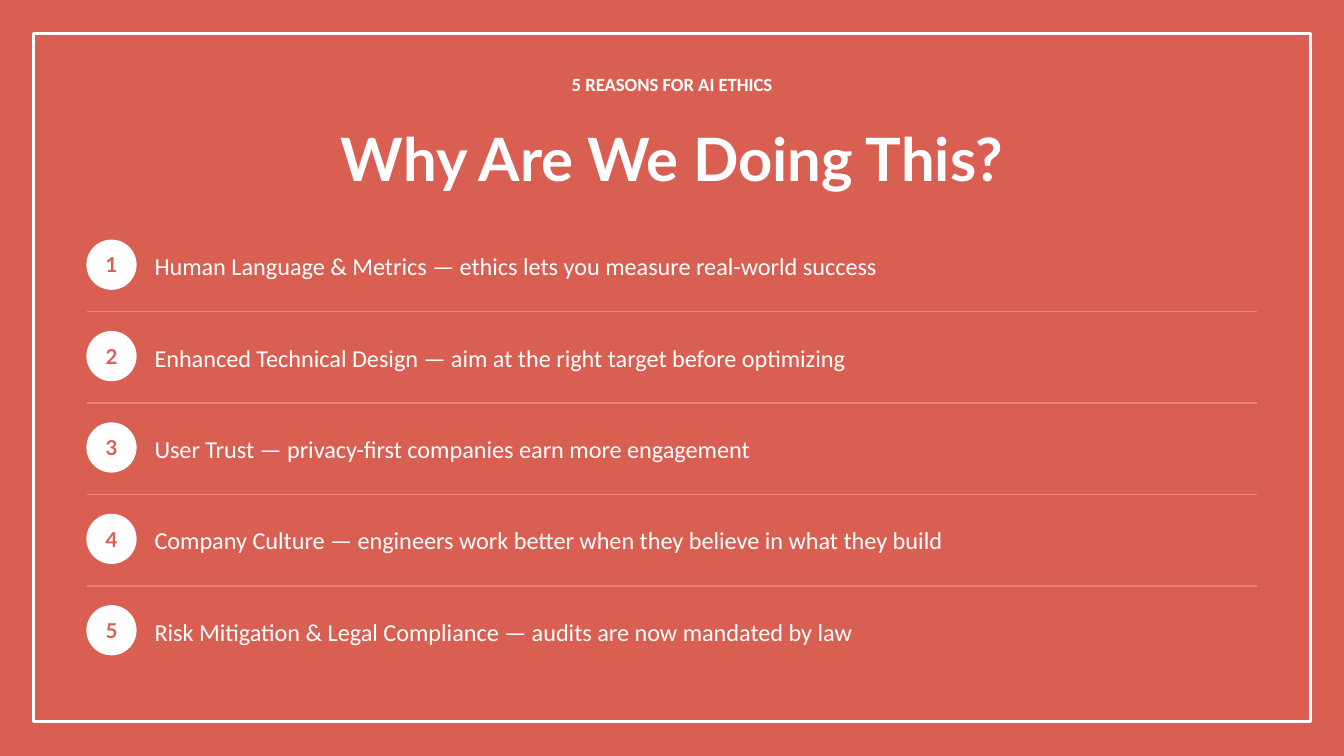
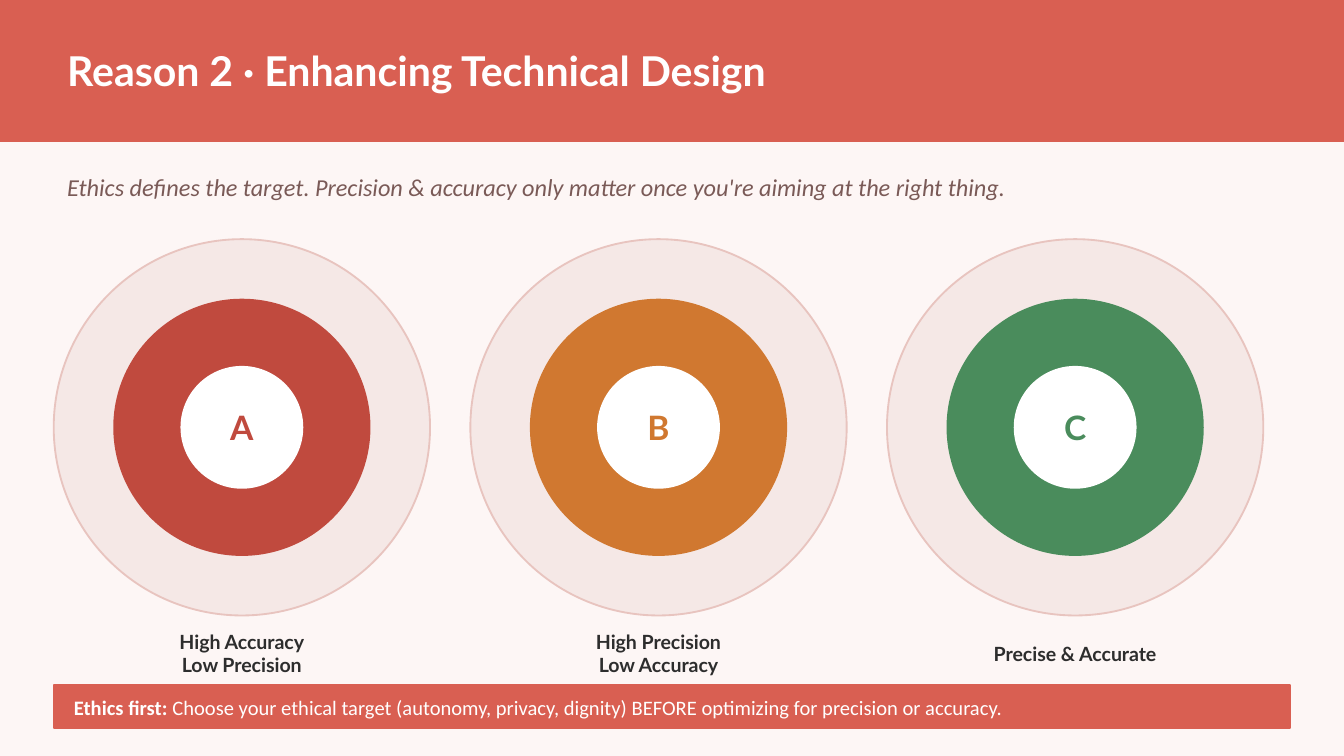
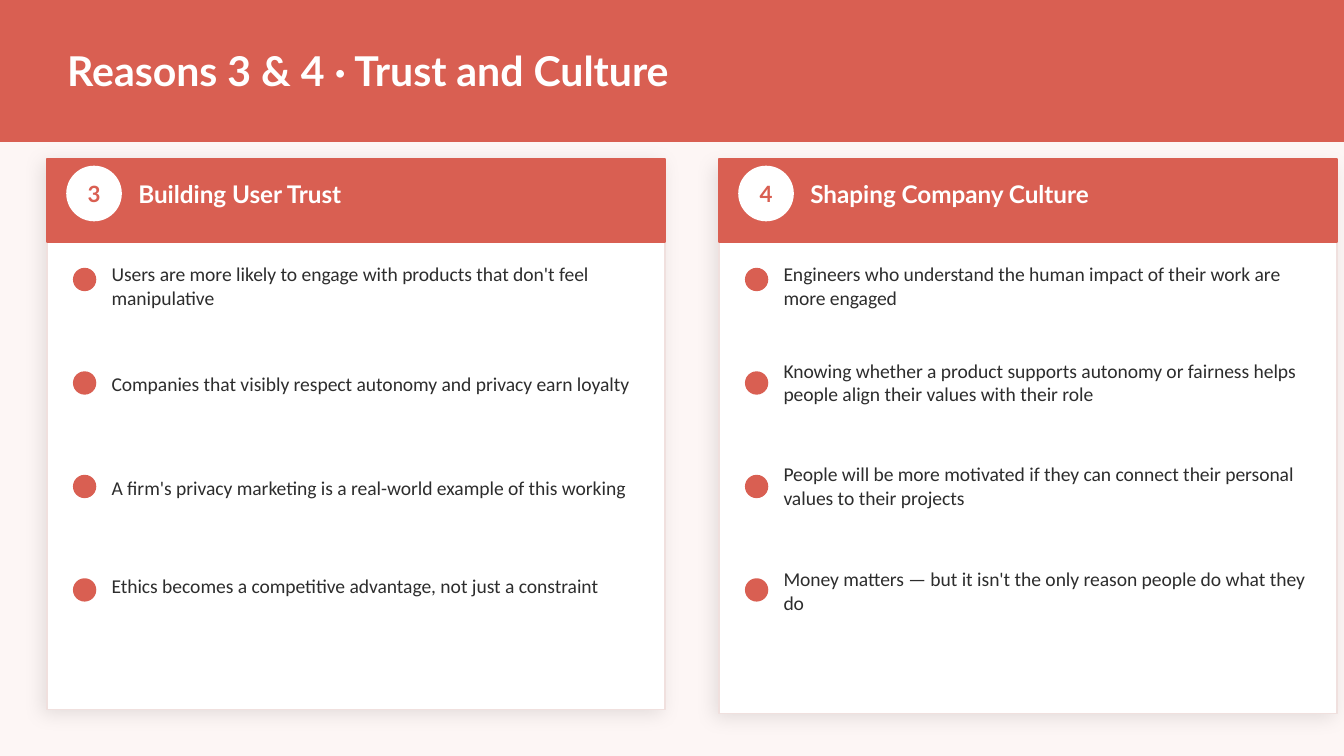
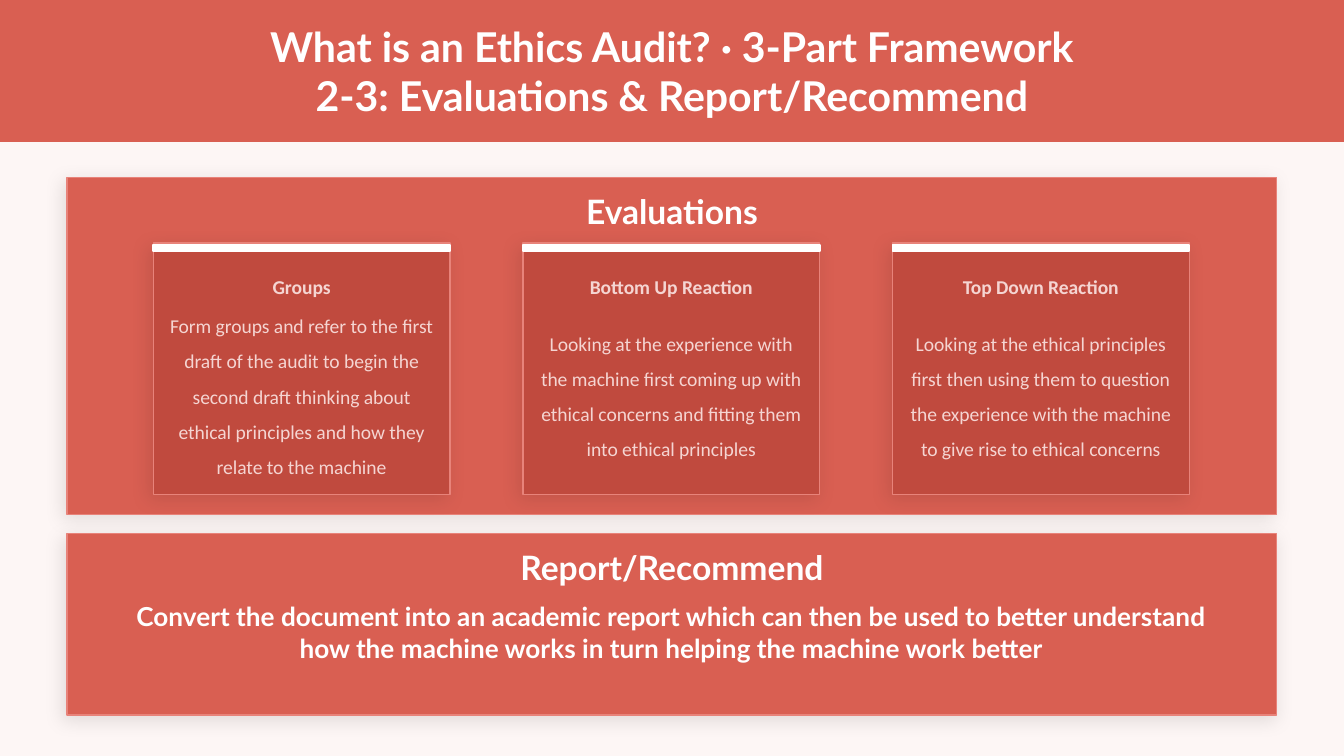
import lxml.etree
import pptx
import pptx.dml.color
import pptx.enum.shapes
import pptx.enum.text
import pptx.oxml
import pptx.oxml.ns
import pptx.util

PIXEL = 9144
SLIDE_WIDTH = 1000
BAND_HEIGHT = 105

COLORS = {
    "coral": "D95F52",
    "coral_light": "E8837A",
    "brick": "C04A3E",
    "orange": "D07830",
    "green": "4A8C5C",
    "white": "FFFFFF",
    "paper": "FDF6F5",
    "ring": "F5E8E6",
    "ring_edge": "E8C4BF",
    "card_edge": "F0E0DE",
    "blush": "F5D5D2",
    "ink": "2D2D2D",
    "brown": "7A5A57",
}
ALIGNMENTS = {
    "left": pptx.enum.text.PP_ALIGN.LEFT,
    "center": pptx.enum.text.PP_ALIGN.CENTER,
}
ANCHORS = {
    "top": pptx.enum.text.MSO_ANCHOR.TOP,
    "middle": pptx.enum.text.MSO_ANCHOR.MIDDLE,
}
SHAPES = {
    "rectangle": pptx.enum.shapes.MSO_SHAPE.RECTANGLE,
    "ellipse": pptx.enum.shapes.MSO_SHAPE.OVAL,
}
SHADOW = (
    '<a:outerShdw {} blurRad="127000" dist="38100" dir="8100000" algn="bl" rotWithShape="0">'
    '<a:srgbClr val="000000"><a:alpha val="10000"/></a:srgbClr></a:outerShdw>'
).format(pptx.oxml.ns.nsdecls("a"))


def px(length):
    return pptx.util.Emu(length * PIXEL)


def color(name):
    return pptx.dml.color.RGBColor.from_string(COLORS[name])


def write_text(shape, text, size=10.5, font="Calibri", ink="white", bold=False, italic=False,
               align="left", anchor="middle", margin=0, indent=0, spacing=None, lead=""):
    frame = shape.text_frame
    frame.word_wrap = True
    frame.auto_size = pptx.enum.text.MSO_AUTO_SIZE.NONE
    frame.vertical_anchor = ANCHORS[anchor]
    frame.margin_top = frame.margin_bottom = frame.margin_right = px(margin)
    frame.margin_left = px(margin + indent)
    for index, line in enumerate(text.split("\n")):
        paragraph = frame.paragraphs[0] if index == 0 else frame.add_paragraph()
        paragraph.alignment = ALIGNMENTS[align]
        if spacing:
            paragraph.line_spacing = spacing
        pieces = [(line, bold)]
        if lead and index == 0:
            pieces.insert(0, (lead, True))
        for words, heavy in pieces:
            run = paragraph.add_run()
            run.text = words
            run.font.size = pptx.util.Pt(size)
            run.font.name = font
            run.font.bold = heavy
            run.font.italic = italic
            run.font.color.rgb = color(ink)


class Deck:
    def __init__(self):
        self.presentation = pptx.Presentation()
        self.presentation.slide_width = px(SLIDE_WIDTH)
        self.presentation.slide_height = px(SLIDE_WIDTH) * 9 // 16
        self.slide = None

    def start_slide(self, background):
        layout = self.presentation.slide_layouts.get_by_name("Title Only")
        self.slide = self.presentation.slides.add_slide(layout)
        fill = self.slide.background.fill
        fill.solid()
        fill.fore_color.rgb = color(background)

    def title(self, text, top=0, height=BAND_HEIGHT, size=22, align="left"):
        title = self.slide.shapes.title
        title.left, title.top, title.width, title.height = px(50), px(top), px(900), px(height)
        write_text(title, text, size=size, font="Lato", bold=True, align=align)
        self.slide.shapes.element.append(title.element)

    def start_banded_slide(self, text, align="left"):
        self.start_slide("paper")
        self.shape(0, 0, SLIDE_WIDTH, BAND_HEIGHT, "coral")
        self.title(text, align=align)

    def shape(self, left, top, width, height, fill, line=None, line_width=1,
              kind="rectangle", shadow=False):
        shape = self.slide.shapes.add_shape(SHAPES[kind], px(left), px(top), px(width), px(height))
        shape.shadow.inherit = False
        if shadow:
            effects = shape.element.spPr.find(pptx.oxml.ns.qn("a:effectLst"))
            effects.append(pptx.oxml.parse_xml(SHADOW))
        if fill:
            shape.fill.solid()
            shape.fill.fore_color.rgb = color(fill)
        else:
            shape.fill.background()
        shape.line.color.rgb = color(line or fill)
        shape.line.width = pptx.util.Pt(line_width)
        return shape

    def card(self, left, top, width, height, fill, line):
        return self.shape(left, top, width, height, fill, line, 0.75, shadow=True)

    def circle(self, left, top, diameter, fill, line=None):
        return self.shape(left, top, diameter, diameter, fill, line, kind="ellipse")

    def badge(self, left, top, diameter, text, size, ink="coral"):
        circle = self.circle(left, top, diameter, "white")
        write_text(circle, text, size=size, font="Lato", ink=ink, bold=True, align="center")

    def text(self, left, top, width, height, text, **text_format):
        box = self.slide.shapes.add_textbox(px(left), px(top), px(width), px(height))
        write_text(box, text, **text_format)

    def rule(self, left, right, y, line):
        connector = self.slide.shapes.add_connector(
            pptx.enum.shapes.MSO_CONNECTOR.STRAIGHT, px(left), px(y), px(right), px(y))
        connector.line.color.rgb = color(line)
        connector.line.width = pptx.util.Pt(0.75)
        lxml.etree.SubElement(connector.element.spPr, pptx.oxml.ns.qn("a:effectLst"))


def build_reasons(deck):
    reasons = [
        "Human Language & Metrics — ethics lets you measure real-world success",
        "Enhanced Technical Design — aim at the right target before optimizing",
        "User Trust — privacy-first companies earn more engagement",
        "Company Culture — engineers work better when they believe in what they build",
        "Risk Mitigation & Legal Compliance — audits are now mandated by law",
    ]
    deck.start_slide("coral")
    deck.shape(25, 25, 950, 512, None, "white", 1.5)
    deck.text(50, 45, 900, 35, "5 REASONS FOR AI ETHICS", size=10, bold=True, align="center")
    deck.title("Why Are We Doing This?", top=82, height=70, size=32, align="center")
    for index, reason in enumerate(reasons):
        top = 172 + 68 * index
        if index:
            deck.rule(65, 935, top - 8, "coral_light")
        deck.badge(65, top + 7, 36, str(index + 1), 11)
        deck.text(115, top, 830, 52, reason, size=13)


def build_targets(deck):
    targets = [
        ("A", "brick", "High Accuracy\nLow Precision"),
        ("B", "orange", "High Precision\nLow Accuracy"),
        ("C", "green", "Precise & Accurate"),
    ]
    deck.start_banded_slide("Reason 2 · Enhancing Technical Design")
    deck.text(50, 115, 900, 48,
              "Ethics defines the target. Precision & accuracy only matter once you're aiming "
              "at the right thing.", size=13, ink="brown", italic=True)
    for index, (letter, hue, caption) in enumerate(targets):
        left = 40 + 310 * index
        deck.circle(left, 178, 280, "ring", "ring_edge")
        deck.circle(left + 45, 223, 190, hue)
        deck.badge(left + 95, 273, 90, letter, 18, hue)
        deck.text(left, 465, 280, 42, caption, font="Lato", ink="ink", bold=True, align="center")
    banner = deck.shape(40, 510, 920, 32, "coral")
    write_text(banner, "Choose your ethical target (autonomy, privacy, dignity) BEFORE optimizing "
               "for precision or accuracy.", size=11, indent=15, lead="Ethics first: ")


def build_trust_and_culture(deck):
    panels = [
        ("3", "Building User Trust", 118, [
            (180, "Users are more likely to engage with products that don't feel manipulative"),
            (253, "Companies that visibly respect autonomy and privacy earn loyalty"),
            (330, "A firm's privacy marketing is a real-world example of this working"),
            (403, "Ethics becomes a competitive advantage, not just a constraint"),
        ]),
        ("4", "Shaping Company Culture", 121, [
            (180, "Engineers who understand the human impact of their work are more engaged"),
            (252, "Knowing whether a product supports autonomy or fairness helps people align "
                  "their values with their role"),
            (329, "People will be more motivated if they can connect their personal values to "
                  "their projects"),
            (407, "Money matters — but it isn't the only reason people do what they do"),
        ]),
    ]
    deck.start_banded_slide("Reasons 3 & 4 · Trust and Culture")
    for column, (number, heading, card_top, points) in enumerate(panels):
        left = 35 + 500 * column
        deck.card(left, card_top, 460, 410, "white", "card_edge")
        deck.shape(left, 118, 460, 62, "coral")
        deck.badge(left + 15, 124, 40, number, 12)
        deck.text(left + 68, 124, 370, 40, heading, size=13, font="Lato", bold=True)
        for row, (text_top, point) in enumerate(points):
            deck.circle(left + 20, 200 + 77 * row, 16, "coral")
            deck.text(left + 48, text_top, 395, 65, point, ink="ink")


def build_audit(deck):
    evaluations = [
        ("Groups", "Form groups and refer to the first draft of the audit to begin the second "
                   "draft thinking about ethical principles and how they relate to the machine"),
        ("Bottom Up Reaction", "Looking at the experience with the machine first coming up with "
                               "ethical concerns and fitting them into ethical principles"),
        ("Top Down Reaction", "Looking at the ethical principles first then using them to question "
                              "the experience with the machine to give rise to ethical concerns"),
    ]
    heading_format = dict(font="Lato", bold=True, align="center", anchor="top", margin=10)
    card_format = dict(ink="blush", align="center", spacing=1.5)
    deck.start_banded_slide("What is an Ethics Audit? · 3-Part Framework\n"
                            "2-3: Evaluations & Report/Recommend", align="center")
    for top, height, heading in [(132, 251, "Evaluations"), (397, 135, "Report/Recommend")]:
        deck.card(50, top, 900, height, "coral", "coral_light")
        deck.text(336, top, 328, 50, heading, size=18, **heading_format)
    for index, (name, description) in enumerate(evaluations):
        left = 114 + 275 * index
        deck.card(left, 181, 221, 187, "brick", "coral_light")
        deck.shape(left, 182, 221, 5, "white")
        deck.text(left - 8, 186, 237, 38, name, bold=True, anchor="top", margin=10, **card_format)
        deck.text(left + 9, 213, 203, 155, description, **card_format)
    deck.text(72, 437, 855, 67,
              "Convert the document into an academic report which can then be used to better "
              "understand how the machine works in turn helping the machine work better",
              size=14, **heading_format)


def main():
    deck = Deck()
    build_reasons(deck)
    build_targets(deck)
    build_trust_and_culture(deck)
    build_audit(deck)
    deck.presentation.save("out.pptx")


if __name__ == "__main__":
    main()
